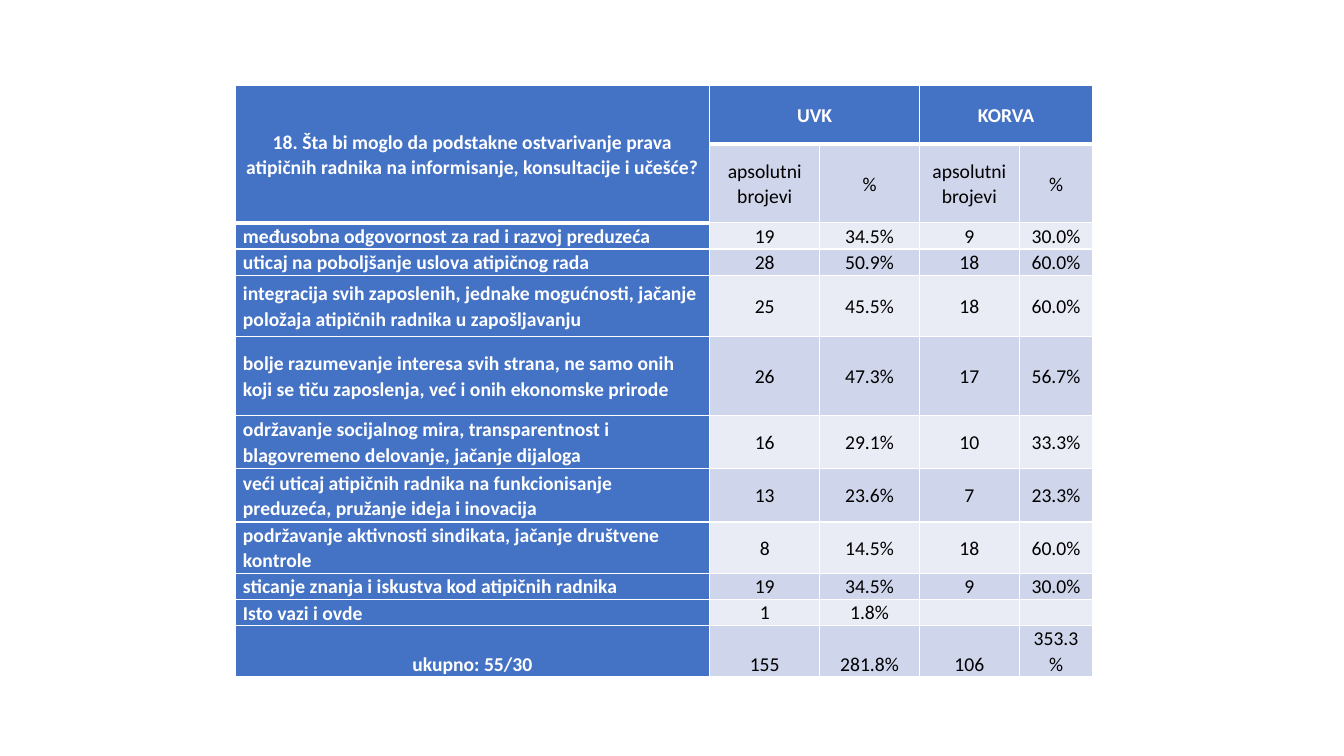
from lxml import etree
from pptx import Presentation
from pptx.dml.color import RGBColor
from pptx.enum.text import MSO_ANCHOR, PP_ALIGN
from pptx.oxml.ns import qn
from pptx.util import Inches, Pt

LEFT, CENTER = PP_ALIGN.LEFT, PP_ALIGN.CENTER
MIDDLE, BOTTOM = MSO_ANCHOR.MIDDLE, MSO_ANCHOR.BOTTOM
WHITE = RGBColor(0xFF, 0xFF, 0xFF)
BLACK = RGBColor(0, 0, 0)
BLUE = RGBColor(0x44, 0x72, 0xC4)
BANDS = [RGBColor(0xE9, 0xEB, 0xF5), RGBColor(0xCF, 0xD5, 0xEA)]

WIDTHS = [4.71, 1.09, 0.99, 0.99, 0.73]
HEIGHTS = [0.58, 0.78, 0.26, 0.26, 0.61, 0.78, 0.53, 0.53, 0.38, 0.26, 0.26, 0.26]
ROWS = [
    ["18. Šta bi moglo da podstakne ostvarivanje prava atipičnih radnika na informisanje, konsultacije i učešće?",
     "UVK", "", "KORVA", ""],
    ["", "apsolutni brojevi", "%", "apsolutni brojevi", "%"],
    ["međusobna odgovornost za rad i razvoj preduzeća", "19", "34.5%", "9", "30.0%"],
    ["uticaj na poboljšanje uslova atipičnog rada", "28", "50.9%", "18", "60.0%"],
    ["integracija svih zaposlenih, jednake mogućnosti, jačanje položaja atipičnih radnika u zapošljavanju",
     "25", "45.5%", "18", "60.0%"],
    ["bolje razumevanje interesa svih strana, ne samo onih koji se tiču zaposlenja, već i onih ekonomske prirode",
     "26", "47.3%", "17", "56.7%"],
    ["održavanje socijalnog mira, transparentnost i blagovremeno delovanje, jačanje dijaloga",
     "16", "29.1%", "10", "33.3%"],
    ["veći uticaj atipičnih radnika na funkcionisanje preduzeća, pružanje ideja i inovacija",
     "13", "23.6%", "7", "23.3%"],
    ["podržavanje aktivnosti sindikata, jačanje društvene kontrole", "8", "14.5%", "18", "60.0%"],
    ["sticanje znanja i iskustva kod atipičnih radnika", "19", "34.5%", "9", "30.0%"],
    ["Isto vazi i ovde", "1", "1.8%", "", ""],
    ["ukupno: 55/30", "155", "281.8%", "106", "353.3%"],
]
LAST = len(ROWS) - 1


def heavy(row, col):
    """Tell whether a heading ends below this cell."""
    return row == 0 and col > 0 or (row, col) == (1, 0)


def edge(cell, side, width):
    """Add one white border; call before the fill is set."""
    line = etree.SubElement(cell._tc.get_or_add_tcPr(), qn("a:ln" + side), w=str(Pt(width)))
    fill = etree.SubElement(line, qn("a:solidFill"))
    etree.SubElement(fill, qn("a:srgbClr"), val=str(WHITE))


# Slide
deck = Presentation()
deck.slide_width, deck.slide_height = Inches(13.33), Inches(7.5)
slide = deck.slides.add_slide(deck.slide_layouts[6])

# Table grid
table = slide.shapes.add_table(
    len(ROWS), len(WIDTHS), Inches(2.33), Inches(0.85),
    Inches(sum(WIDTHS)), Inches(sum(HEIGHTS))).table
for col, width in zip(table.columns, WIDTHS):
    col.width = Inches(width)
for row, height in zip(table.rows, HEIGHTS):
    row.height = Inches(height)

# Cells: blue headings, banded figures
for r, texts in enumerate(ROWS):
    for c, text in enumerate(texts):
        cell = table.cell(r, c)
        head = r == 0 or c == 0
        for side, thick in (("L", False), ("R", False),
                            ("T", heavy(r - 1, c)), ("B", heavy(r, c))):
            edge(cell, side, 3 if thick else 1)
        cell.fill.solid()
        cell.fill.fore_color.rgb = BLUE if head else BANDS[r % 2]
        cell.margin_left = cell.margin_right = Inches(0.08)
        cell.margin_top = cell.margin_bottom = 0
        low = r == LAST or (r, c) == (LAST - 1, 0)
        cell.vertical_anchor = BOTTOM if low else MIDDLE
        cell.text = text
        para = cell.text_frame.paragraphs[0]
        para.alignment = LEFT if c == 0 and 1 < r < LAST else CENTER
        para.line_spacing = 1.07
        font = para.font
        font.name, font.size, font.bold = "Calibri", Pt(14), head
        font.color.rgb = WHITE if head else BLACK

# Merged headings
for top, left, bottom, right in ((0, 0, 1, 0), (0, 1, 0, 2), (0, 3, 0, 4)):
    table.cell(top, left).merge(table.cell(bottom, right))

deck.save("out.pptx")
